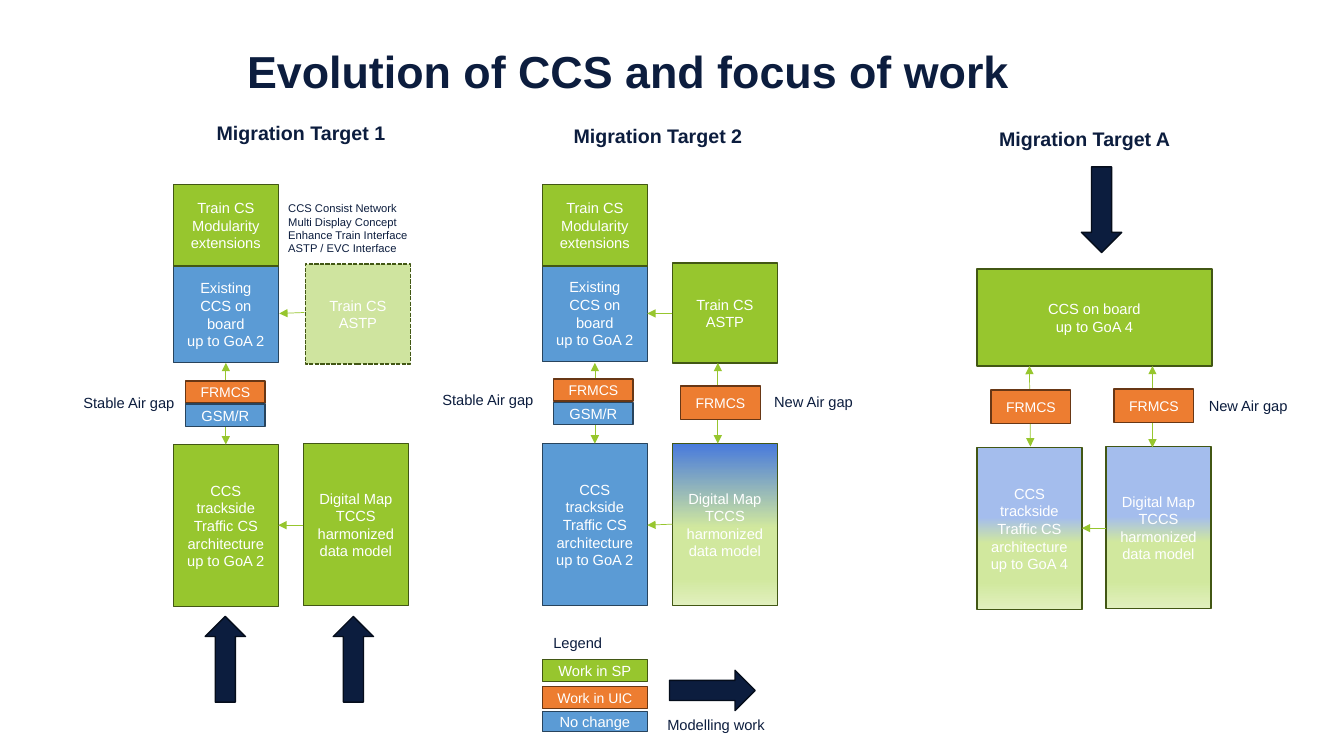
from dataclasses import dataclass
from typing import NamedTuple

from lxml import etree
from pptx import Presentation
from pptx.dml.color import RGBColor
from pptx.enum.dml import MSO_LINE
from pptx.enum.shapes import MSO_CONNECTOR, MSO_SHAPE
from pptx.enum.text import MSO_ANCHOR, MSO_AUTO_SIZE, PP_ALIGN
from pptx.oxml.ns import qn
from pptx.util import Inches, Pt

RECTANGLE, ARROW = MSO_SHAPE.RECTANGLE, MSO_SHAPE.RIGHT_ARROW
STRAIGHT, DASHED = MSO_CONNECTOR.STRAIGHT, MSO_LINE.SQUARE_DOT
LEFT, CENTER, MIDDLE = PP_ALIGN.LEFT, PP_ALIGN.CENTER, MSO_ANCHOR.MIDDLE
GROW = MSO_AUTO_SIZE.SHAPE_TO_FIT_TEXT


@dataclass(frozen=True)
class Theme:
    font: str = "Arial"
    navy: str = "0C1D3E"
    navy_edge: str = "050D1B"
    white: str = "FFFFFF"
    green: str = "97C62E"
    title_size: float = 32
    heading_size: float = 14
    body_size: float = 10.5
    small_size: float = 10
    note_size: float = 8


THEME = Theme()


class Look(NamedTuple):
    fill: str
    edge: str
    size: float = THEME.body_size
    opacity: int = 100
    dashed: bool = False
    stops: tuple[tuple[int, str], ...] = ()


class Block(NamedTuple):
    left: float
    top: float
    width: float
    height: float
    text: str
    look: Look


class Link(NamedTuple):
    start: tuple[float, float]
    end: tuple[float, float]
    two_way: bool = False


class Label(NamedTuple):
    left: float
    top: float
    width: float
    height: float
    text: str
    size: float = THEME.body_size
    bold: bool = False


class WorkArrow(NamedTuple):
    left: float
    top: float
    rotation: int = 0


FADE = ((83, "D1E89E"), (100, "E1F0BE"))
SP = Look(THEME.green, "425714")
SP_PLANNED = SP._replace(opacity=46, dashed=True)
SP_PARTLY = SP._replace(stops=((0, "487ADC"), (52, "D1E89E"), *FADE))
SP_LATER = SP._replace(stops=((43, "A4BDED"), (59, "D1E89E"), *FADE))
UIC = Look("ED7D31", "683715", THEME.small_size)
UNCHANGED = Look("5B9BD5", "28445D")

WIDE, TALL, ONBOARD, EXTENSION, ASTP = 1.04, 1.61, 0.96, 0.81, 0.99
GAP_WIDTH, GAP_HEIGHT, ROW = 0.79, 0.33, 0.22
TARGET_1, TARGET_2, TARGET_A = 1.72, 5.38, 9.69
MAP_1, MAP_2, MAP_A = 3.01, 6.67, 10.97

MODULARITY = "Train CS\nModularity extensions"
EXISTING = "Existing CCS on board\nup to GoA 2"
TRACKSIDE = "CCS trackside\nTraffic CS architecture up to GoA "
DIGITAL_MAP = "Digital Map\nTCCS harmonized data model"
TRAIN_ASTP = "Train CS\nASTP"

SYSTEMS = [
    Block(TARGET_1, 4.41, WIDE, TALL, TRACKSIDE + "2", SP),
    Block(MAP_1, 4.4, WIDE, TALL, DIGITAL_MAP, SP),
    Block(TARGET_1, 2.64, WIDE, ONBOARD, EXISTING, UNCHANGED),
    Block(TARGET_1, 1.83, WIDE, EXTENSION, MODULARITY, SP),
    Block(3.03, 2.62, WIDE, ASTP, TRAIN_ASTP, SP_PLANNED),
    Block(TARGET_2, 4.4, WIDE, TALL, TRACKSIDE + "2", UNCHANGED),
    Block(MAP_2, 4.4, WIDE, TALL, DIGITAL_MAP, SP_PARTLY),
    Block(TARGET_2, 2.63, WIDE, ONBOARD, EXISTING, UNCHANGED),
    Block(TARGET_2, 1.83, WIDE, EXTENSION, MODULARITY, SP),
    Block(MAP_2, 2.61, WIDE, ASTP, TRAIN_ASTP, SP),
    Block(TARGET_A, 4.44, WIDE, TALL, TRACKSIDE + "4", SP_LATER),
    Block(MAP_A, 4.43, WIDE, TALL, DIGITAL_MAP, SP_LATER),
    Block(TARGET_A, 2.67, 2.33, ONBOARD, "CCS on board\nup to GoA 4", SP),
]
LINKS = [
    Link((3.01, 5.21), (2.76, 5.21)),
    Link((3.02, 3.1), (2.77, 3.11)),
    Link((6.67, 5.2), (6.42, 5.21)),
    Link((6.67, 3.11), (6.42, 3.11)),
    Link((10.97, 5.24), (10.73, 5.24)),
    Link((2.24, 3.6), (2.24, 4.41), True),
    Link((5.9, 3.6), (5.9, 4.4), True),
    Link((7.12, 3.6), (7.12, 4.4), True),
    Link((10.21, 3.63), (10.22, 4.43), True),
    Link((11.43, 3.63), (11.43, 4.44), True),
]
AIR_GAPS = [
    Block(1.84, 3.78, GAP_WIDTH, ROW, "FRMCS", UIC),
    Block(1.84, 4.01, GAP_WIDTH, ROW, "GSM/R", UNCHANGED),
    Block(5.49, 3.76, GAP_WIDTH, ROW, "FRMCS", UIC),
    Block(5.49, 3.99, GAP_WIDTH, ROW, "GSM/R", UNCHANGED),
    Block(6.75, 3.83, GAP_WIDTH, GAP_HEIGHT, "FRMCS", UIC),
    Block(9.83, 3.87, GAP_WIDTH, GAP_HEIGHT, "FRMCS", UIC),
    Block(11.05, 3.86, GAP_WIDTH, GAP_HEIGHT, "FRMCS", UIC),
]
LEGEND = [
    Block(TARGET_2, 6.54, WIDE, ROW, "Work in SP", SP),
    Block(TARGET_2, 6.81, WIDE, ROW, "Work in UIC", UIC),
    Block(TARGET_2, 7.06, WIDE, 0.2, "No change", UNCHANGED),
]
LABELS = [
    Label(2.05, 1.15, 1.91, 0.34, "Migration Target 1", THEME.heading_size, True),
    Label(5.59, 1.18, 1.88, 0.34, "Migration Target 2", THEME.heading_size, True),
    Label(9.81, 1.21, 1.91, 0.34, "Migration Target A", THEME.heading_size, True),
    Label(2.76, 1.95, 1.41, 0.64, "CCS Consist Network\nMulti Display Concept\n"
          "Enhance Train Interface\nASTP / EVC Interface", THEME.note_size),
    Label(0.73, 3.86, 1.17, 0.29, "Stable Air gap"),
    Label(4.29, 3.83, 1.17, 0.29, "Stable Air gap"),
    Label(7.58, 3.85, 1.01, 0.28, "New Air gap"),
    Label(11.89, 3.89, 1.01, 0.28, "New Air gap"),
    Label(5.39, 6.24, 0.7, 0.28, "Legend"),
    Label(6.52, 7.05, 1.19, 0.28, "Modelling work"),
]
WORK_ARROWS = [WorkArrow(1.81, 6.34, 270), WorkArrow(3.08, 6.34, 270),
               WorkArrow(10.5, 1.88, 90), WorkArrow(6.64, 6.65)]


def write(frame, text: str, size: float, color: str, bold=False, align=LEFT) -> None:
    frame.text = text
    for paragraph in frame.paragraphs:
        paragraph.alignment = align
        for run in paragraph.runs:
            run.font.name, run.font.size, run.font.bold = THEME.font, Pt(size), bold
            run.font.color.rgb = RGBColor.from_string(color)


def add_filled(slide, kind, left, top, width, height, fill: str, edge: str):
    shape = slide.shapes.add_shape(kind, *map(Inches, (left, top, width, height)))
    shape.shadow.inherit = False
    shape.fill.solid()
    shape.fill.fore_color.rgb = RGBColor.from_string(fill)
    shape.line.color.rgb = RGBColor.from_string(edge)
    shape.line.width = Pt(1)
    return shape


def set_downward_gradient(shape, stops: tuple[tuple[int, str], ...]) -> None:
    shape.fill.gradient()
    gradient = shape.fill._xPr.find(qn("a:gradFill"))
    gradient.find(qn("a:lin")).set("ang", "5400000")
    stop_list = gradient.find(qn("a:gsLst"))
    for old_stop in list(stop_list):
        stop_list.remove(old_stop)
    for percent, color in stops:
        stop = etree.SubElement(stop_list, qn("a:gs"), pos=str(percent * 1000))
        etree.SubElement(stop, qn("a:srgbClr"), val=color)


def add_block(slide, block: Block) -> None:
    look = block.look
    shape = add_filled(slide, RECTANGLE, *block[:4], look.fill, look.edge)
    if look.stops:
        set_downward_gradient(shape, look.stops)
    if look.opacity < 100:
        color = shape.fill._xPr.find(qn("a:solidFill"))[0]
        etree.SubElement(color, qn("a:alpha"), val=str(look.opacity * 1000))
    if look.dashed:
        shape.line.dash_style = DASHED
    shape.text_frame.word_wrap = True
    shape.text_frame.vertical_anchor = MIDDLE
    write(shape.text_frame, block.text, look.size, THEME.white, align=CENTER)


def add_link(slide, link: Link) -> None:
    connector = slide.shapes.add_connector(STRAIGHT, *map(Inches, link.start + link.end))
    connector.line.color.rgb = RGBColor.from_string(THEME.green)
    connector.line.width = Pt(0.5)
    outline = connector.line._get_or_add_ln()
    for end in ("a:headEnd", "a:tailEnd") if link.two_way else ("a:tailEnd",):
        etree.SubElement(outline, qn(end), type="triangle")
    etree.SubElement(connector._element.spPr, qn("a:effectLst"))


def add_label(slide, label: Label) -> None:
    frame = slide.shapes.add_textbox(*map(Inches, label[:4])).text_frame
    frame.word_wrap, frame.auto_size = False, GROW
    write(frame, label.text, label.size, THEME.navy, label.bold)


def add_title(slide) -> None:
    title = slide.shapes.title
    title.left, title.top, title.width, title.height = map(Inches, (2.35, 0.4, 8.62, 0.67))
    title.text_frame.vertical_anchor = MIDDLE
    write(title.text_frame, "Evolution of CCS and focus of work", THEME.title_size, THEME.navy, True)
    title.text_frame.paragraphs[0].line_spacing = 0.9


def main() -> None:
    deck = Presentation()
    deck.slide_width, deck.slide_height = Inches(13.33), Inches(7.5)
    slide = deck.slides.add_slide(deck.slide_layouts.get_by_name("Title Only"))
    add_title(slide)
    for system in SYSTEMS:
        add_block(slide, system)
    for link in LINKS:
        add_link(slide, link)
    for block in AIR_GAPS + LEGEND:
        add_block(slide, block)
    for label in LABELS:
        add_label(slide, label)
    for left, top, rotation in WORK_ARROWS:
        arrow = add_filled(slide, ARROW, left, top, 0.85, 0.4, THEME.navy, THEME.navy_edge)
        arrow.rotation = rotation
    deck.save("out.pptx")


if __name__ == "__main__":
    main()
